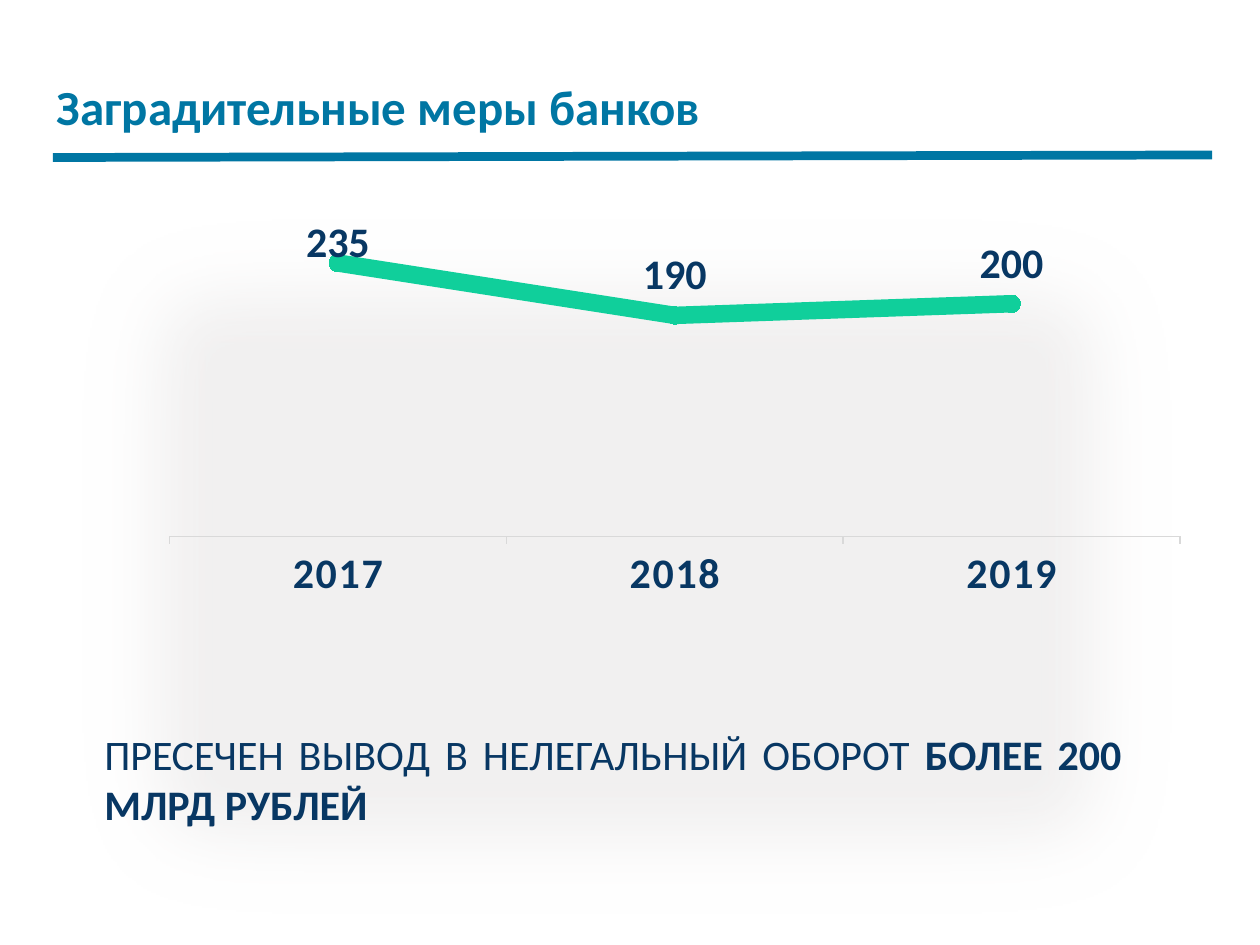
from lxml import etree
from pptx import Presentation
from pptx import util as u
from pptx.chart.data import CategoryChartData
from pptx.dml.color import RGBColor
from pptx.enum import chart as ch, shapes, text
from pptx.oxml import parse_xml
from pptx.oxml.ns import nsdecls, qn

TEAL = RGBColor(0x00, 0x76, 0xA3)
NAVY = RGBColor(0x08, 0x37, 0x63)
GREEN = RGBColor(0x10, 0xCF, 0x9B)
SKY = RGBColor(0x82, 0xB1, 0xE5)
PALE = RGBColor(0xE7, 0xE6, 0xE6)
AXIS_GREY = RGBColor(0xD9, 0xD9, 0xD9)
BLACK = RGBColor(0, 0, 0)


def inches(*values):
    return [u.Inches(value) for value in values]


class SlideBuilder:
    font_name = "Calibri"

    def __init__(self, slide):
        self.slide = slide

    def style(self, font, size, color, bold=False):
        font.name = self.font_name
        font.size = u.Pt(size)
        font.color.rgb = color
        font.bold = bold

    def rule(self, start, end, color, width):
        line = self.slide.shapes.add_connector(
            shapes.MSO_CONNECTOR.STRAIGHT, *inches(*start, *end))
        line.line.color.rgb = color
        line.line.width = u.Pt(width)
        etree.SubElement(line._element.spPr, qn("a:effectLst"))

    def soft_panel(self, box, color, opacity, edge):
        panel = self.slide.shapes.add_shape(
            shapes.MSO_SHAPE.RECTANGLE, *inches(*box))
        panel.shadow.inherit = False
        panel.fill.solid()
        panel.fill.fore_color.rgb = color
        panel.line.fill.background()
        properties = panel._element.spPr
        tint = properties.find(".//" + qn("a:srgbClr"))
        etree.SubElement(tint, qn("a:alpha"), val=str(opacity * 1000))
        effects = properties.find(qn("a:effectLst"))
        etree.SubElement(effects, qn("a:softEdge"), rad=str(u.Pt(edge)))

    def title(self, box, wording):
        heading = self.slide.shapes.title
        heading.left, heading.top, heading.width, heading.height = inches(*box)
        frame = heading.text_frame
        frame.text = wording
        frame.word_wrap = True
        frame.auto_size = text.MSO_AUTO_SIZE.NONE
        frame.vertical_anchor = text.MSO_ANCHOR.TOP
        paragraph = frame.paragraphs[0]
        paragraph.alignment = text.PP_ALIGN.LEFT
        paragraph.line_spacing = 1.0
        self.style(paragraph.runs[0].font, 28, TEAL, True)

    def statement(self, box, parts):
        frame = self.slide.shapes.add_textbox(*inches(*box)).text_frame
        frame.word_wrap = True
        paragraph = frame.paragraphs[0]
        paragraph.alignment = text.PP_ALIGN.JUSTIFY
        for wording, bold in parts:
            run = paragraph.add_run()
            run.text = wording
            self.style(run.font, 24, NAVY, bold)

    def line_chart(self, box, years, amounts):
        data = CategoryChartData()
        data.categories = years
        data.add_series("Series 1", amounts)
        chart = self.slide.shapes.add_chart(
            ch.XL_CHART_TYPE.LINE_MARKERS, *inches(*box), data).chart
        chart.has_legend = False
        chart.has_title = False
        self.style(chart.font, 10, BLACK)
        self.format_axes(chart)
        plot = chart.plots[0]
        plot.vary_by_categories = False
        self.format_series(plot.series[0])
        self.place_plot(chart)

    def format_axes(self, chart):
        amounts = chart.value_axis
        amounts.minimum_scale = 0
        amounts.maximum_scale = 250
        amounts.has_major_gridlines = False
        amounts.visible = False
        years = chart.category_axis
        years.major_tick_mark = ch.XL_TICK_MARK.OUTSIDE
        years.format.line.color.rgb = AXIS_GREY
        years.format.line.width = u.Pt(0.75)
        self.style(years.tick_labels.font, 24, NAVY, True)
        years._element.find(".//" + qn("a:defRPr")).set("spc", "100")

    def format_series(self, series):
        series.smooth = False
        series.format.line.color.rgb = GREEN
        series.format.line.width = u.Pt(10)
        self.format_marker(series.marker, SKY)
        self.format_marker(series.points[0].marker, GREEN)
        labels = series.data_labels
        labels.show_value = True
        first_label = series.points[0].data_label
        for label in (labels, first_label):
            label.position = ch.XL_LABEL_POSITION.ABOVE
            self.style(label.font, 24, NAVY, True)
        nudge = parse_xml(
            f'<c:layout {nsdecls("c")}><c:manualLayout>'
            '<c:x val="0"/><c:y val="0.05"/></c:manualLayout></c:layout>')
        series._element.find(".//" + qn("c:dLbl")).insert(1, nudge)

    def format_marker(self, marker, color):
        marker.style = ch.XL_MARKER_STYLE.CIRCLE
        marker.size = 10
        marker.format.fill.solid()
        marker.format.fill.fore_color.rgb = color
        marker.format.line.fill.background()

    def place_plot(self, chart):
        area = chart._chartSpace.find(".//" + qn("c:plotArea"))
        for previous in area.findall(qn("c:layout")):
            area.remove(previous)
        area.insert(0, parse_xml(
            f'<c:layout {nsdecls("c")}><c:manualLayout>'
            '<c:layoutTarget val="inner"/>'
            '<c:xMode val="edge"/><c:yMode val="edge"/>'
            '<c:x val="0"/><c:y val="0.08"/><c:w val="1"/><c:h val="0.74"/>'
            '</c:manualLayout></c:layout>'))


def main():
    deck = Presentation()
    deck.slide_width, deck.slide_height = inches(10, 7.5)
    page = SlideBuilder(deck.slides.add_slide(deck.slide_layouts[5]))
    page.rule((0.42, 1.25), (9.62, 1.23), TEAL, 5)
    page.soft_panel((0.35, 1.44, 9.26, 6.12), PALE, 60, 50)
    page.title((0.35, 0.56, 8.65, 0.57), "Заградительные меры банков")
    page.statement((0.73, 5.73, 8.27, 0.91), [
        ("ПРЕСЕЧЕН ВЫВОД В НЕЛЕГАЛЬНЫЙ ОБОРОТ ", False),
        ("БОЛЕЕ 200 МЛРД РУБЛЕЙ", True),
    ])
    page.line_chart((1.34, 1.7, 8.03, 3.12),
                    ["2017", "2018", "2019"], [235, 190, 200])
    deck.save("out.pptx")


if __name__ == "__main__":
    main()
